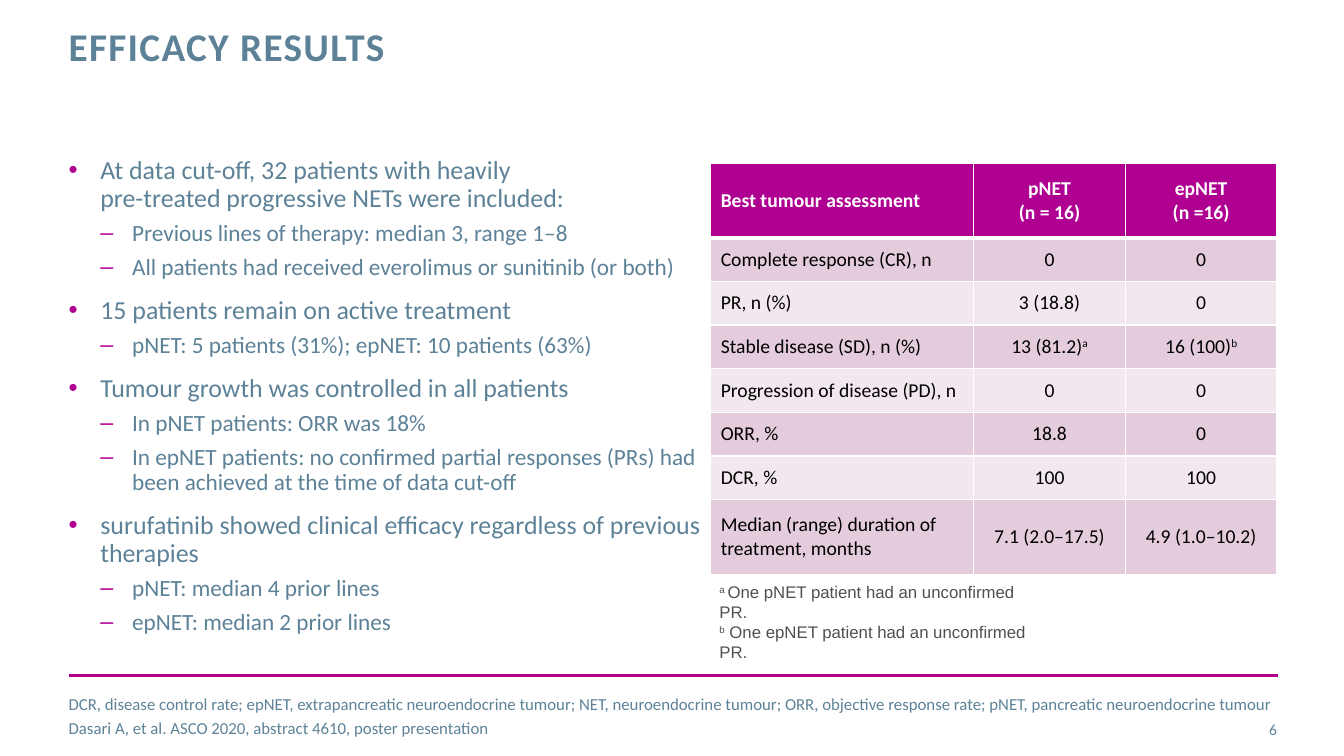
from pptx import Presentation
from pptx.util import Cm, Pt
from pptx.dml.color import RGBColor
from pptx.enum.text import PP_ALIGN as Align, MSO_ANCHOR as Anchor, MSO_AUTO_SIZE as Fit
from pptx.oxml import parse_xml as parse
from pptx.oxml.ns import nsdecls
from lxml.etree import SubElement as Sub

tone = RGBColor.from_string
NS = nsdecls("a")
PINK, BLUE, WHITE = "B00091", "5D8298", "FFFFFF"


def write(par, text, size, hue, bold=False, name="Calibri"):
    look = {"size": Pt(size), "bold": bold, "name": name}
    for i, part in enumerate(text.split("^")):
        for j, line in enumerate(part.split("\n")):
            if j:
                par.add_line_break()
            if not line:
                continue
            run = par.add_run()
            run.text = line
            for key, val in look.items():
                setattr(run.font, key, val)
            run.font.color.rgb = tone(hue)
            if i % 2:
                run.font._element.set("baseline", "30000")


def frame(shape, place, pad=0, anchor=Anchor.TOP):
    for key, val in zip(("left", "top", "width", "height"), place):
        setattr(shape, key, Cm(val))
    body = shape.text_frame
    look = {"word_wrap": True, "auto_size": Fit.NONE, "vertical_anchor": anchor,
            "margin_left": Cm(pad), "margin_right": Cm(pad),
            "margin_top": Cm(pad / 2), "margin_bottom": Cm(pad / 2)}
    for key, val in look.items():
        setattr(body, key, val)
    return body


deck = Presentation()
deck.slide_width, deck.slide_height = Cm(33.87), Cm(19.05)
slide = deck.slides.add_slide(deck.slide_layouts[5])
shapes = slide.shapes

rule = shapes.add_connector(1, Cm(1.73), Cm(17.02), Cm(32.21), Cm(17.02))
rule.line.color.rgb = tone(PINK)
rule.line.width = Pt(2)
rule._element.spPr.append(parse(f"<a:effectLst {NS}/>"))

title = frame(shapes.title, (1.73, 0.69, 24.28, 2.24))
par = title.paragraphs[0]
par.alignment = Align.LEFT
par.line_spacing = Pt(30)
write(par, "EFFICACY RESULTS", 28, BLUE, True)
par.runs[0].font._element.set("spc", "100")

points = [
    (0, "At data cut-off, 32 patients with heavily\npre-treated progressive NETs were included:"),
    (1, "Previous lines of therapy: median 3, range 1–8"),
    (1, "All patients had received everolimus or sunitinib (or both)"),
    (0, "15 patients remain on active treatment"),
    (1, "pNET: 5 patients (31%); epNET: 10 patients (63%)"),
    (0, "Tumour growth was controlled in all patients"),
    (1, "In pNET patients: ORR was 18%"),
    (1, "In epNET patients: no confirmed partial responses (PRs) had been achieved at the time of data cut-off"),
    (0, "surufatinib showed clinical efficacy regardless of previous therapies"),
    (1, "pNET: median 4 prior lines"),
    (1, "epNET: median 2 prior lines"),
]
body = frame(shapes.add_textbox(0, 0, 0, 0), (1.73, 3.96, 16, 12.57))
for i, (level, text) in enumerate(points):
    par = body.add_paragraph() if i else body.paragraphs[0]
    props = par._p.get_or_add_pPr()
    props.set("marL", str(Cm(0.8 * (level + 1))))
    props.set("indent", str(-Cm(0.8)))
    for tag in (f'<a:buClr {NS}><a:srgbClr val="{PINK}"/></a:buClr>',
                f'<a:buFont {NS} typeface="Arial"/>',
                f'<a:buChar {NS} char="{"•–"[level]}"/>'):
        props.append(parse(tag))
    par.level = level
    par.line_spacing = 0.9
    if i:
        par.space_before = Pt((12, 6)[level])
    write(par, text, (18.5, 16.6)[level], BLUE)

number = frame(shapes.add_textbox(0, 0, 0, 0), (30, 17.86, 2.18, 1.02), anchor=Anchor.MIDDLE)
number.paragraphs[0].alignment = Align.RIGHT
write(number.paragraphs[0], "6", 11, BLUE)

sources = [
    "DCR, disease control rate; epNET, extrapancreatic neuroendocrine tumour; NET, neuroendocrine tumour; "
    "ORR, objective response rate; pNET, pancreatic neuroendocrine tumour",
    "Dasari A, et al. ASCO 2020, abstract 4610, poster presentation",
]
foot = frame(shapes.add_textbox(0, 0, 0, 0), (1.73, 17.02, 30.4, 2.03), anchor=Anchor.MIDDLE)
for i, text in enumerate(sources):
    par = foot.add_paragraph() if i else foot.paragraphs[0]
    if i:
        par.space_before = Pt(3)
    write(par, text, 12, BLUE)

rows = [
    ("Best tumour assessment", "pNET\n(n = 16)", "epNET\n(n =16)"),
    ("Complete response (CR), n", "0", "0"),
    ("PR, n (%)", "3 (18.8)", "0"),
    ("Stable disease (SD), n (%)", "13 (81.2)^a", "16 (100)^b"),
    ("Progression of disease (PD), n", "0", "0"),
    ("ORR, %", "18.8", "0"),
    ("DCR, %", "100", "100"),
    ("Median (range) duration of treatment, months", "7.1 (2.0–17.5)", "4.9 (1.0–10.2)"),
]
table = shapes.add_table(len(rows), 3, Cm(17.91), Cm(4.11), Cm(14.27), Cm(10.36)).table
for col, wide in zip(table.columns, (6.63, 3.82, 3.82)):
    col.width = Cm(wide)
for r, row in enumerate(rows):
    table.rows[r].height = Cm(1.88 if r in (0, len(rows) - 1) else 1.1)
    for c, text in enumerate(row):
        cell = table.cell(r, c)
        cell.vertical_anchor = Anchor.MIDDLE
        props = cell._tc.get_or_add_tcPr()
        for side in ("L", "R", "T", "B"):
            thick = 3 if (r, side) in ((0, "B"), (1, "T")) else 1
            props.append(parse(
                f'<a:ln{side} {NS} w="{Pt(thick)}"><a:solidFill><a:srgbClr val="{WHITE}"/>'
                f'</a:solidFill></a:ln{side}>'))
        cell.fill.solid()
        cell.fill.fore_color.rgb = tone(("F2E7EE", "E4CCDC")[r % 2] if r else PINK)
        par = cell.text_frame.paragraphs[0]
        par.alignment = Align.CENTER if c else Align.LEFT
        write(par, text, 14, "000000" if r else WHITE, r == 0)

note = frame(shapes.add_textbox(0, 0, 0, 0), (17.88, 14.53, 8.26, 2.3), 0.25)
write(note.paragraphs[0],
      "^a ^One pNET patient had an unconfirmed PR.\n^b^ One epNET patient had an unconfirmed PR.",
      12, "505050", name="Arial")

deck.save("out.pptx")
